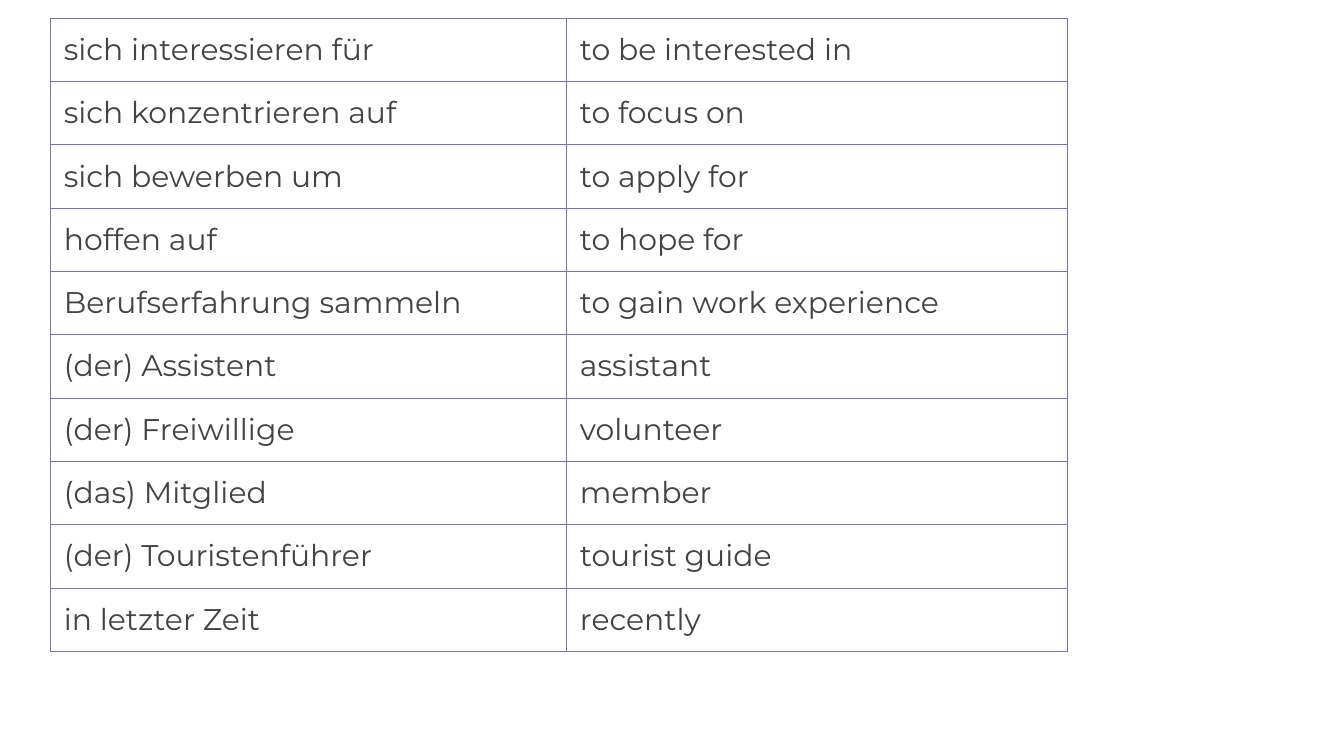
from dataclasses import dataclass

from lxml.etree import SubElement
from pptx import Presentation
from pptx.dml.color import RGBColor
from pptx.oxml.ns import qn
from pptx.util import Pt


@dataclass(frozen=True)
class Theme:
    font: str = "Montserrat"
    size: float = 32
    text: str = "434343"
    border: str = "786EC8"
    border_width: float = 0.75
    background: str = "FFFFFF"


theme = Theme()

VOCABULARY = [
    ("sich interessieren für", "to be interested in"),
    ("sich konzentrieren auf", "to focus on"),
    ("sich bewerben um", "to apply for"),
    ("hoffen auf", "to hope for"),
    ("Berufserfahrung sammeln", "to gain work experience"),
    ("(der) Assistent", "assistant"),
    ("(der) Freiwillige", "volunteer"),
    ("(das) Mitglied", "member"),
    ("(der) Touristenführer", "tourist guide"),
    ("in letzter Zeit", "recently"),
]
COLUMN_WIDTHS = (553, 537)
ROW_HEIGHT = 60
CELL_MARGIN = Pt(14.4)


def add_borders(cell):
    properties = cell._tc.get_or_add_tcPr()
    for side in ("lnL", "lnR", "lnT", "lnB"):
        line = SubElement(properties, qn(f"a:{side}"), w=str(Pt(theme.border_width)))
        fill = SubElement(line, qn("a:solidFill"))
        SubElement(fill, qn("a:srgbClr"), val=theme.border)


prs = Presentation()
prs.slide_width, prs.slide_height = Pt(1440), Pt(810)
slide = prs.slides.add_slide(prs.slide_layouts[6])
slide.background.fill.solid()
slide.background.fill.fore_color.rgb = RGBColor.from_string(theme.background)

vocabulary = slide.shapes.add_table(
    len(VOCABULARY), len(COLUMN_WIDTHS), Pt(54), Pt(19.4),
    Pt(sum(COLUMN_WIDTHS)), Pt(ROW_HEIGHT * len(VOCABULARY)),
).table
vocabulary.first_row = False
vocabulary.horz_banding = False
for column, width in zip(vocabulary.columns, COLUMN_WIDTHS):
    column.width = Pt(width)

for row, entry in zip(vocabulary.rows, VOCABULARY):
    for cell, phrase in zip(row.cells, entry):
        cell.margin_left = cell.margin_right = CELL_MARGIN
        cell.margin_top = cell.margin_bottom = CELL_MARGIN
        add_borders(cell)
        cell.fill.background()
        cell.text = phrase
        font = cell.text_frame.paragraphs[0].font
        font.name = theme.font
        font.size = Pt(theme.size)
        font.color.rgb = RGBColor.from_string(theme.text)

prs.save("out.pptx")
